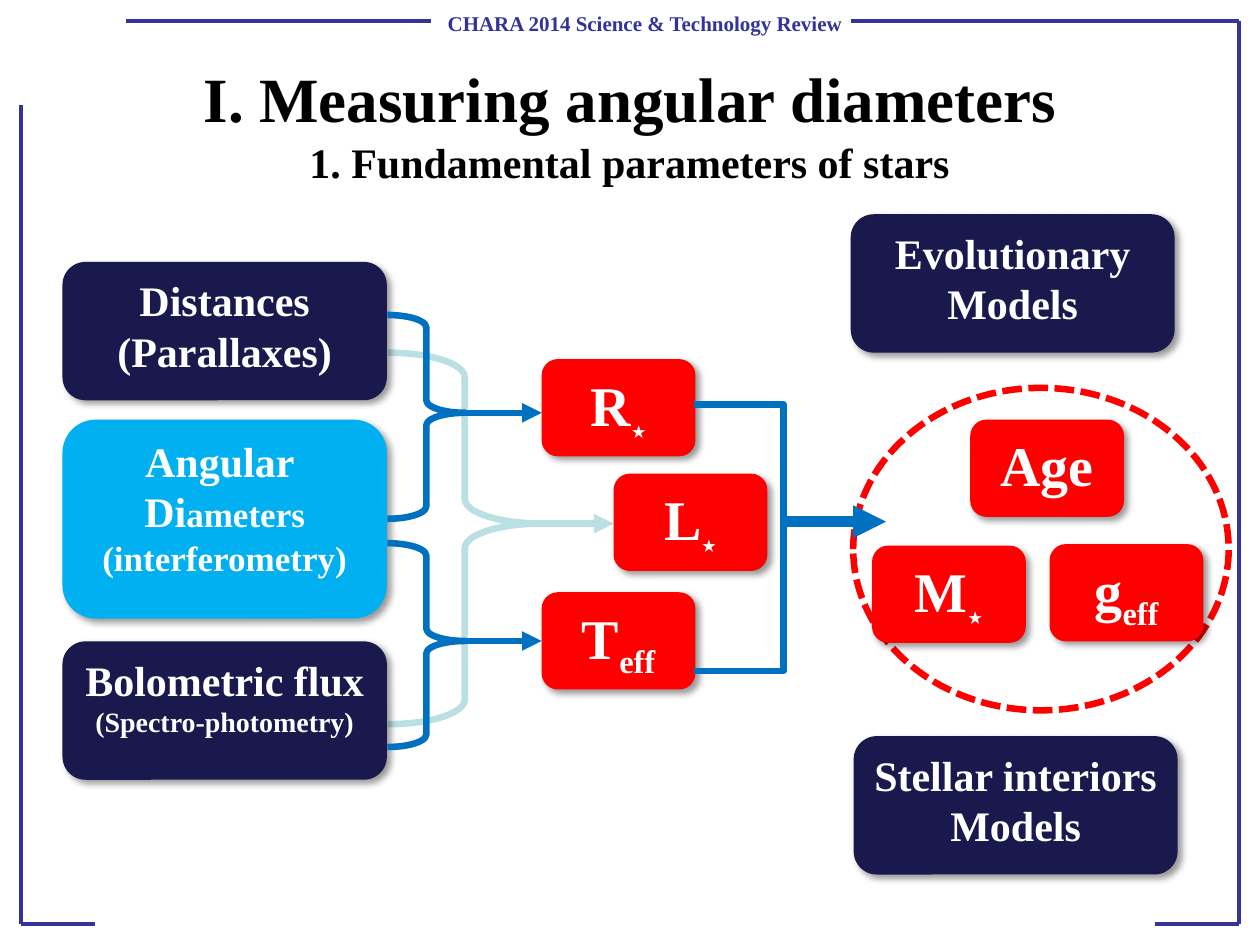
from lxml import etree
from pptx import Presentation
from pptx.dml.color import RGBColor
from pptx.enum.dml import MSO_LINE
from pptx.enum.shapes import MSO_CONNECTOR, MSO_SHAPE
from pptx.enum.text import MSO_ANCHOR, PP_ALIGN
from pptx.oxml import parse_xml
from pptx.oxml.ns import nsdecls, qn
from pptx.util import Cm, Pt

STRAIGHT = MSO_CONNECTOR.STRAIGHT
ROUNDED = MSO_SHAPE.ROUNDED_RECTANGLE
BRACE = MSO_SHAPE.RIGHT_BRACE
ELLIPSE = MSO_SHAPE.OVAL
DOTTED = MSO_LINE.SQUARE_DOT
CENTER = PP_ALIGN.CENTER
TOP, MIDDLE = MSO_ANCHOR.TOP, MSO_ANCHOR.MIDDLE

COLORS = {
    "frame": "333399", "title": "000000", "label": "FFFFFF",
    "navy": "19194D", "sky": "00B0F0", "red": "FF0000",
    "pale": "BBE0E3", "blue": "0070C0",
}
SERIF, SYMBOL = "Times New Roman", "Cambria"
STAR = ("⋆", 32, SYMBOL, True)
EFFECTIVE = ("eff", 32, SERIF, True)


def color(name):
    return RGBColor.from_string(COLORS[name])


def add_run(paragraph, text, size, color_name, font=SERIF, subscript=False):
    run = paragraph.add_run()
    run.text = text
    run.font.size = Pt(size)
    run.font.name = font
    run.font.bold = True
    run.font.color.rgb = color(color_name)
    if subscript:
        run.font._element.set("baseline", "-25000")


def add_paragraphs(text_frame, paragraphs, color_name):
    """Each paragraph is a list of (text, size[, font, subscript]) runs."""
    for index, runs in enumerate(paragraphs):
        paragraph = text_frame.paragraphs[0] if index == 0 else text_frame.add_paragraph()
        paragraph.alignment = CENTER
        for text, size, *style in runs:
            add_run(paragraph, text, size, color_name, *style)


def add_line(slide, start, end, color_name, width, arrow=False):
    line = slide.shapes.add_connector(STRAIGHT, *(Cm(value) for value in start + end))
    line.line.color.rgb = color(color_name)
    line.line.width = Pt(width)
    if arrow:
        etree.SubElement(line.line._get_or_add_ln(), qn("a:tailEnd"), type="triangle")
    etree.SubElement(line._element.spPr, qn("a:effectLst"))


def add_outline(slide, kind, box, color_name):
    shape = slide.shapes.add_shape(kind, *(Cm(value) for value in box))
    shape.shadow.inherit = False
    shape.fill.background()
    shape.line.color.rgb = color(color_name)
    shape.line.width = Pt(3.75)
    return shape


def add_card(slide, box, fill, paragraphs):
    """Rounded box with a soft shadow towards the lower right."""
    shape = slide.shapes.add_shape(ROUNDED, *(Cm(value) for value in box))
    shape.fill.solid()
    shape.fill.fore_color.rgb = color(fill)
    shape.line.fill.background()
    shape._element.spPr.append(parse_xml(
        f'<a:effectLst {nsdecls("a")}>'
        f'<a:outerShdw blurRad="{Pt(4)}" dist="{Pt(3)}" dir="2700000" algn="tl" rotWithShape="0">'
        '<a:srgbClr val="000000"><a:alpha val="40000"/></a:srgbClr>'
        '</a:outerShdw></a:effectLst>'))
    shape.text_frame.word_wrap = True
    shape.text_frame.vertical_anchor = TOP
    add_paragraphs(shape.text_frame, paragraphs, "label")


def add_parameter(slide, left, top, runs):
    add_card(slide, (left, top, 3.1, 1.96), "red", [runs])


def add_merge(slide, box, curve, middle, arrow, color_name, arrow_width=3.75):
    """Brace joining two sources, with an arrow leaving its point."""
    left, top, width, height = box
    brace = add_outline(slide, BRACE, box, color_name)
    brace.adjustments[0] = curve
    brace.adjustments[1] = middle
    start, end = arrow
    level = top + height * middle
    add_line(slide, (left + start, level), (left + end, level), color_name, arrow_width, True)


def add_frame(slide, left, top, width, height):
    right, bottom = left + width, top + height
    header = slide.shapes.add_textbox(Cm(left + 8.23), Cm(0.08), Cm(8.69), Cm(0.76))
    header.text_frame.word_wrap = False
    add_paragraphs(header.text_frame, [[("CHARA 2014 Science & Technology Review", 12)]], "frame")
    for start, end in [
        ((left, top + 1.69), (left, bottom)),
        ((left, bottom), (left + 1.48, bottom)),
        ((left + 16.72, top), (right, top)),
        ((right, top), (right, bottom)),
        ((left + 2.12, top), (left + 8.26, top)),
        ((right - 1.69, bottom), (right, bottom)),
    ]:
        add_line(slide, start, end, "frame", 2.25)


def add_titles(slide, left, top, width):
    heading = slide.shapes.add_textbox(Cm(left), Cm(top), Cm(width), Cm(2.64))
    subtitle = slide.shapes.title
    subtitle.left, subtitle.top = Cm(left + 0.38), Cm(top + 1.95)
    subtitle.width, subtitle.height = Cm(width - 0.78), Cm(1.32)
    for shape, text, size in [
        (heading, "I. Measuring angular diameters", 36),
        (subtitle, "1. Fundamental parameters of stars", 24),
    ]:
        shape.text_frame.word_wrap = True
        shape.text_frame.vertical_anchor = MIDDLE
        add_paragraphs(shape.text_frame, [[(text, size)]], "title")


def add_observables(slide, left, top, width):
    for offset, height, fill, paragraphs in [
        (3.18, 4.01, "sky", [[("Angular ", 24)], [("Di", 24), ("ameters", 20)],
                             [("(interferometry)", 20)]]),
        (0, 2.79, "navy", [[("Distances", 24)], [("(Parallaxes)", 24)]]),
        (7.65, 2.79, "navy", [[("Bolometric flux", 24)], [("(Spectro-photometry)", 16)]]),
    ]:
        add_card(slide, (left, top + offset, width, height), fill, paragraphs)


def add_measured_parameters(slide, left, top):
    add_parameter(slide, left, top, [("R", 32), STAR])
    add_parameter(slide, left, top + 4.7, [("T", 32), EFFECTIVE])
    add_parameter(slide, left + 1.45, top + 2.31, [("L", 32), STAR])


def add_models(slide, left, top, width):
    for shift, offset, first_line in [(0, 0, "Evolutionary"), (0.06, 10.52, "Stellar interiors")]:
        add_card(slide, (left + shift, top + offset, width, 2.79), "navy",
                 [[(first_line, 24)], [("Models", 24)]])


def add_derived_parameters(slide, left, top, width, height):
    ellipse = add_outline(slide, ELLIPSE, (left, top, width, height), "red")
    ellipse.line.dash_style = DOTTED
    add_parameter(slide, left + 2.36, top + 0.64, [("Age", 32)])
    add_parameter(slide, left + 0.38, top + 3.18, [("M", 32), STAR])
    add_parameter(slide, left + 3.96, top + 3.15, [("g", 32), EFFECTIVE])


def main():
    presentation = Presentation()
    presentation.slide_width, presentation.slide_height = Cm(25.4), Cm(19.05)
    slide = presentation.slides.add_slide(presentation.slide_layouts[5])

    add_frame(slide, 0.43, 0.43, 24.54, 18.19)
    add_titles(slide, 0, 0.64, 25.4)
    add_merge(slide, (7.82, 7.11, 3.1, 7.49), 0.16, 0.46, (2.7, 4.55), "pale")
    add_observables(slide, 1.26, 5.28, 6.54)
    add_measured_parameters(slide, 10.92, 7.24)
    add_models(slide, 17.15, 4.32, 6.53)
    add_derived_parameters(slide, 17.2, 7.82, 7.57, 6.5)
    for top in (6.35, 10.95):
        add_merge(slide, (7.81, top, 1.57, 4.11), 0.16, 0.48, (1.26, 3.11), "blue")
    add_merge(slide, (14, 8.15, 3.58, 5.38), 0, 0.44, (1.77, 3.86), "blue", 6.25)

    presentation.save("out.pptx")


if __name__ == "__main__":
    main()
